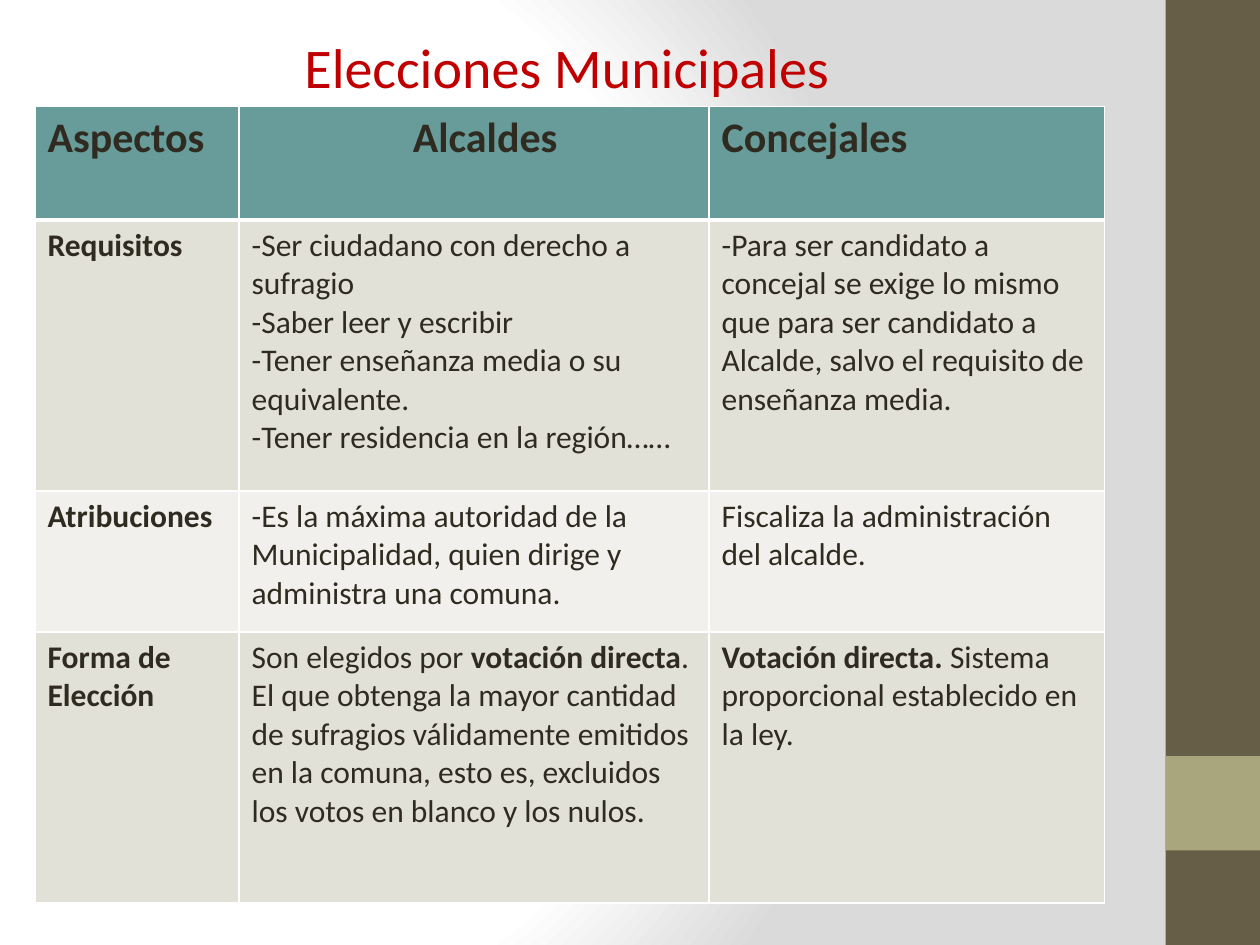
from lxml.etree import SubElement
from pptx import Presentation
from pptx.dml.color import RGBColor
from pptx.enum.shapes import MSO_SHAPE
from pptx.enum.text import MSO_ANCHOR, MSO_AUTO_SIZE, PP_ALIGN
from pptx.oxml import parse_xml
from pptx.oxml.ns import nsdecls, qn
from pptx.util import Pt

TEXT_COLOR = "2F2B20"
HEADER_FILL = "689C9A"
BAND_FILLS = ["E2E1D7", "F1F0EC"]
COLUMN_WIDTHS = [116.6, 268.6, 226.1]
ROW_HEIGHTS = [64.8, 154.8, 80.6, 154.8]
HEADERS = ["**Aspectos**", "**Alcaldes**", "**Concejales**"]
BODY_ROWS = [
    [
        "**Requisitos**",
        "-Ser ciudadano con derecho a sufragio\n"
        "-Saber leer y escribir\n"
        "-Tener enseñanza media o su equivalente.\n"
        "-Tener residencia en la región……",
        "-Para ser candidato a concejal se exige lo mismo que para ser "
        "candidato a Alcalde, salvo el requisito de enseñanza media.",
    ],
    [
        "**Atribuciones**",
        "-Es la máxima autoridad de la Municipalidad, quien dirige y "
        "administra una comuna.",
        "Fiscaliza la administración del alcalde.",
    ],
    [
        "**Forma de Elección**",
        "Son elegidos por **votación directa**. El que obtenga la mayor "
        "cantidad de sufragios válidamente emitidos en la comuna, esto es, "
        "excluidos los votos en blanco y los nulos.",
        "**Votación directa. **Sistema proporcional establecido en la ley.",
    ],
]


def color(value):
    return RGBColor.from_string(value)


def apply_format(target, values):
    for name, value in values.items():
        setattr(target, name, value)


def set_background(slide):
    stops = [(0, "FFFFFF"), (75, "FFFFFF"), (100, "DADADA")]
    stop_xml = "".join(
        f'<a:gs pos="{position * 1000}"><a:srgbClr val="{value}"/></a:gs>'
        for position, value in stops
    )
    background = parse_xml(
        f'<p:bg {nsdecls("p", "a")}><p:bgPr><a:gradFill rotWithShape="1">'
        f'<a:gsLst>{stop_xml}</a:gsLst><a:path path="circle">'
        '<a:fillToRect l="20000" t="50000" r="100000" b="50000"/></a:path>'
        "</a:gradFill><a:effectLst/></p:bgPr></p:bg>"
    )
    slide.element.cSld.insert(0, background)


def add_side_block(slide, top, height, fill):
    shape = slide.shapes.add_shape(
        MSO_SHAPE.RECTANGLE, Pt(666), Pt(top), Pt(54), Pt(height)
    )
    shape.shadow.inherit = False
    shape.fill.solid()
    shape.fill.fore_color.rgb = color(fill)
    shape.line.fill.background()


def write_run(paragraph, text, size, text_color, bold=False):
    run = paragraph.add_run()
    run.text = text
    apply_format(run.font, {"name": "Calibri", "size": Pt(size), "bold": bold})
    run.font.color.rgb = color(text_color)


def write_title(slide, text):
    title = slide.shapes.title
    apply_format(title, {
        "left": Pt(116), "top": Pt(15), "width": Pt(459), "height": Pt(46),
    })
    apply_format(title.text_frame, {
        "margin_left": Pt(58), "margin_top": Pt(3.6), "margin_bottom": Pt(3.6),
        "vertical_anchor": MSO_ANCHOR.TOP, "word_wrap": True,
        "auto_size": MSO_AUTO_SIZE.SHAPE_TO_FIT_TEXT,
    })
    paragraph = title.text_frame.paragraphs[0]
    paragraph.alignment = PP_ALIGN.LEFT
    write_run(paragraph, text, 32, "C00000")


def add_borders(cell, widths):
    properties = cell._tc.get_or_add_tcPr()
    for side, width in widths.items():
        line = SubElement(properties, qn(f"a:ln{side}"), w=str(Pt(width)))
        fill = SubElement(line, qn("a:solidFill"))
        SubElement(fill, qn("a:srgbClr"), val="FFFFFF")


def write_cell(cell, text, size, fill, borders):
    add_borders(cell, borders)
    cell.fill.solid()
    cell.fill.fore_color.rgb = color(fill)
    frame = cell.text_frame
    for index, line in enumerate(text.split("\n")):
        paragraph = frame.add_paragraph() if index else frame.paragraphs[0]
        for part, segment in enumerate(line.split("**")):
            if segment:
                write_run(paragraph, segment, size, TEXT_COLOR, part % 2 == 1)


def add_comparison_table(slide):
    rows = [HEADERS] + BODY_ROWS
    table = slide.shapes.add_table(
        len(rows), len(HEADERS), Pt(20), Pt(61),
        Pt(sum(COLUMN_WIDTHS)), Pt(sum(ROW_HEIGHTS)),
    ).table
    for column, width in zip(table.columns, COLUMN_WIDTHS):
        column.width = Pt(width)
    for row, height in zip(table.rows, ROW_HEIGHTS):
        row.height = Pt(height)
    for row_index, texts in enumerate(rows):
        is_header = row_index == 0
        size = 24 if is_header else 18
        fill = HEADER_FILL if is_header else BAND_FILLS[(row_index - 1) % 2]
        borders = {
            "L": 1, "R": 1,
            "T": 3 if row_index == 1 else 1,
            "B": 3 if is_header else 1,
        }
        for column_index, text in enumerate(texts):
            write_cell(table.cell(row_index, column_index), text, size, fill, borders)
    mayor_header = table.cell(0, 1)
    mayor_header.margin_left = Pt(20)
    mayor_header.text_frame.paragraphs[0].alignment = PP_ALIGN.CENTER


def main():
    presentation = Presentation()
    apply_format(presentation, {"slide_width": Pt(720), "slide_height": Pt(540)})
    slide = presentation.slides.add_slide(presentation.slide_layouts[5])
    set_background(slide)
    add_side_block(slide, 0, 540, "675E47")
    add_side_block(slide, 432, 54, "A9A57C")
    add_comparison_table(slide)
    write_title(slide, "Elecciones Municipales")
    presentation.save("out.pptx")


if __name__ == "__main__":
    main()
